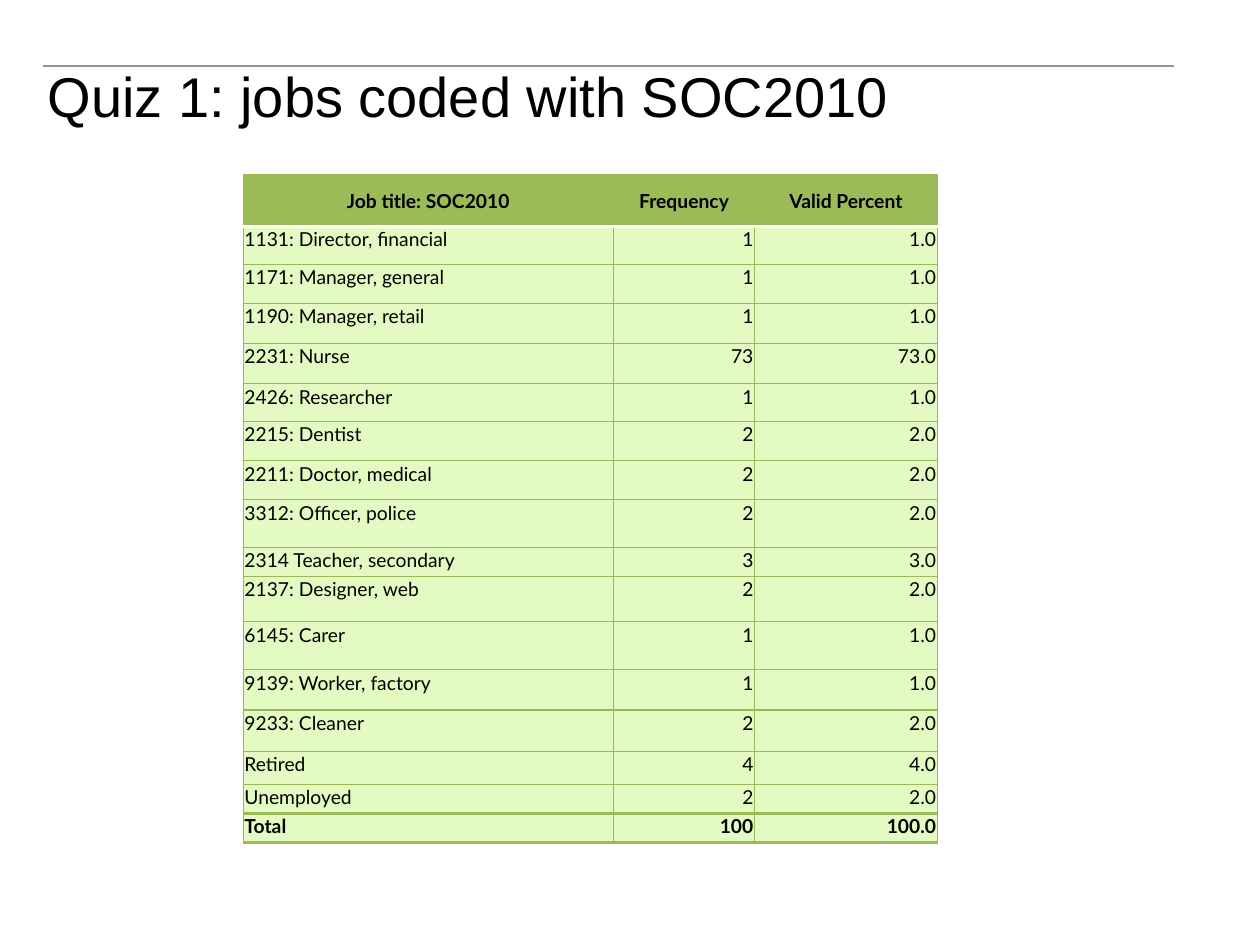
from lxml.etree import SubElement
from pptx import Presentation
from pptx.dml.color import RGBColor
from pptx.enum.shapes import MSO_CONNECTOR
from pptx.enum.text import MSO_ANCHOR, PP_ALIGN
from pptx.oxml.ns import qn
from pptx.util import Inches, Pt

COLORS = {"ink": "000000", "rule": "8E959C", "header": "9BBB59",
          "body": "E3FBC2", "grid": "98B955", "white": "FFFFFF"}

JOBS = [
    ("1131: Director, financial", 1, 0.3),
    ("1171: Manager, general", 1, 0.31),
    ("1190: Manager, retail", 1, 0.32),
    ("2231: Nurse", 73, 0.32),
    ("2426: Researcher", 1, 0.3),
    ("2215: Dentist", 2, 0.31),
    ("2211: Doctor, medical", 2, 0.31),
    ("3312: Officer, police", 2, 0.38),
    ("2314 Teacher, secondary", 3, 0.23),
    ("2137: Designer, web", 2, 0.36),
    ("6145: Carer", 1, 0.38),
    ("9139: Worker, factory", 1, 0.32),
    ("9233: Cleaner", 2, 0.33),
    ("Retired", 4, 0.26),
    ("Unemployed", 2, 0.23),
    ("Total", 100, 0.23),
]
HEADINGS = ("Job title: SOC2010", "Frequency", "Valid Percent")
COLUMN_WIDTHS = (2.94, 1.12, 1.45)
HEADER_HEIGHT = 0.41


def format_text(paragraph, text, font_name, size, bold, align):
    paragraph.alignment = align
    run = paragraph.add_run()
    run.text = text
    for key, value in {"name": font_name, "size": Pt(size), "bold": bold}.items():
        setattr(run.font, key, value)
    run.font.color.rgb = RGBColor.from_string(COLORS["ink"])


def add_border(cell, side, color, width):
    edge = SubElement(cell._tc.get_or_add_tcPr(), qn(f"a:ln{side}"), w=str(Pt(width)))
    fill = SubElement(edge, qn("a:solidFill"))
    SubElement(fill, qn("a:srgbClr"), val=COLORS[color])


deck = Presentation()
deck.slide_width, deck.slide_height = Inches(10), Inches(7.5)
W, H = deck.slide_width, deck.slide_height
slide = deck.slides.add_slide(deck.slide_layouts[6])

rule_y = int(H * 0.07)
rule = slide.shapes.add_connector(
    MSO_CONNECTOR.STRAIGHT, int(W * 0.034), rule_y, int(W * 0.932), rule_y)
rule.line.color.rgb = RGBColor.from_string(COLORS["rule"])
rule.line.width = Pt(0.75)
SubElement(rule._element.spPr, qn("a:effectLst"))

title = slide.shapes.add_textbox(
    int(W * 0.028), int(H * 0.017), int(W * 0.9), int(H * 0.168)).text_frame
title.word_wrap = True
title.vertical_anchor = MSO_ANCHOR.MIDDLE
format_text(title.paragraphs[0], "Quiz 1: jobs coded with SOC2010",
            "Arial", 32, False, PP_ALIGN.LEFT)

heights = [HEADER_HEIGHT] + [height for _, _, height in JOBS]
total_count = JOBS[-1][1]
rows = [HEADINGS] + [(job, str(count), f"{100 * count / total_count:.1f}")
                     for job, count, _ in JOBS]
last = len(rows) - 1

frequencies = slide.shapes.add_table(
    len(rows), len(HEADINGS), int(W * 0.193), int(H * 0.185),
    Inches(sum(COLUMN_WIDTHS)), Inches(sum(heights))).table
frequencies.horz_banding = False
for column, width in zip(frequencies.columns, COLUMN_WIDTHS):
    column.width = Inches(width)

thin = ("grid", 0.75)
row_edges = [thin] + [("white", 2)] + [thin] * (last - 2) + [("header", 2)] * 2
for r, (texts, height) in enumerate(zip(rows, heights)):
    frequencies.rows[r].height = Inches(height)
    is_header = r == 0
    for c, text in enumerate(texts):
        cell = frequencies.cell(r, c)
        cell_format = {
            "margin_left": Inches(0.01), "margin_right": Inches(0.01),
            "margin_top": Inches(0.01), "margin_bottom": 0,
            "vertical_anchor": MSO_ANCHOR.MIDDLE if is_header else MSO_ANCHOR.TOP,
        }
        for key, value in cell_format.items():
            setattr(cell, key, value)
        for side, edge in zip("LRTB", (thin, thin, row_edges[r], row_edges[r + 1])):
            add_border(cell, side, *edge)
        cell.fill.solid()
        cell.fill.fore_color.rgb = RGBColor.from_string(
            COLORS["header" if is_header else "body"])
        align = PP_ALIGN.CENTER if is_header else PP_ALIGN.RIGHT if c else PP_ALIGN.LEFT
        format_text(cell.text_frame.paragraphs[0], text, "Lato", 11,
                    r in (0, last), align)

deck.save("out.pptx")
